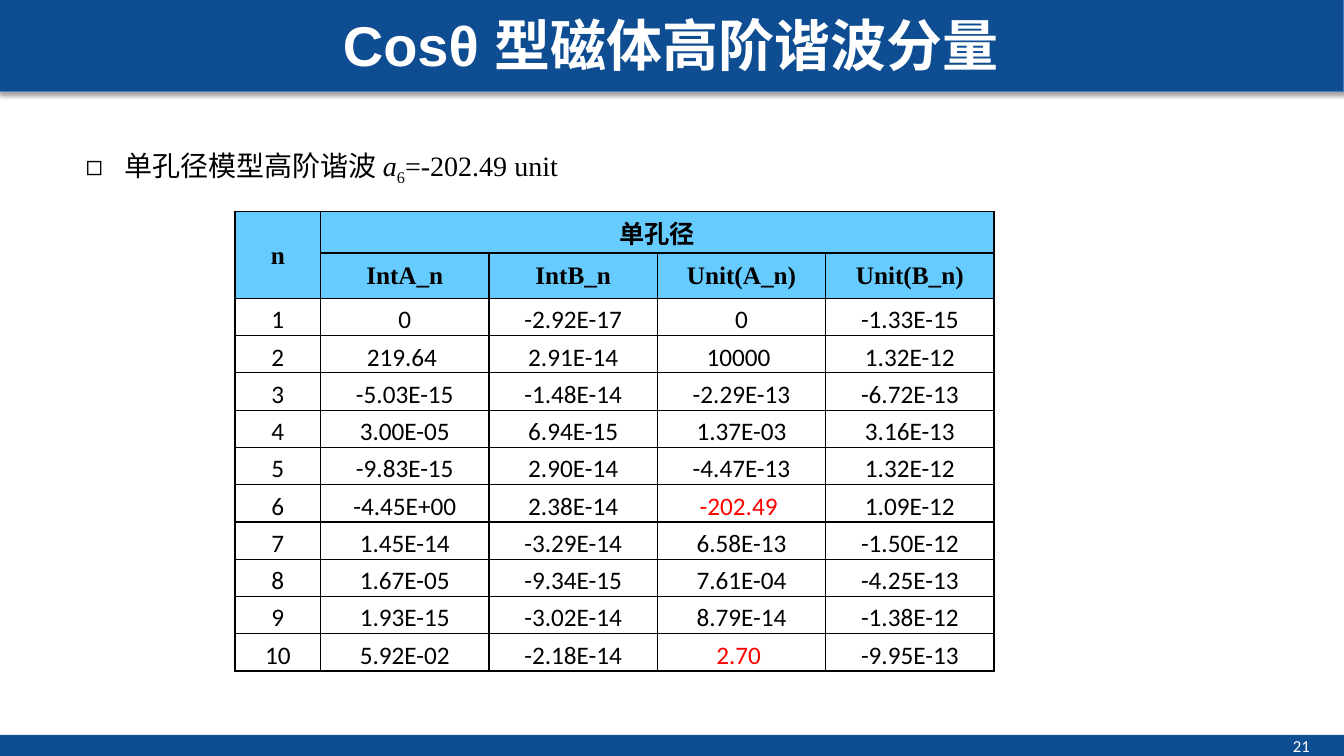
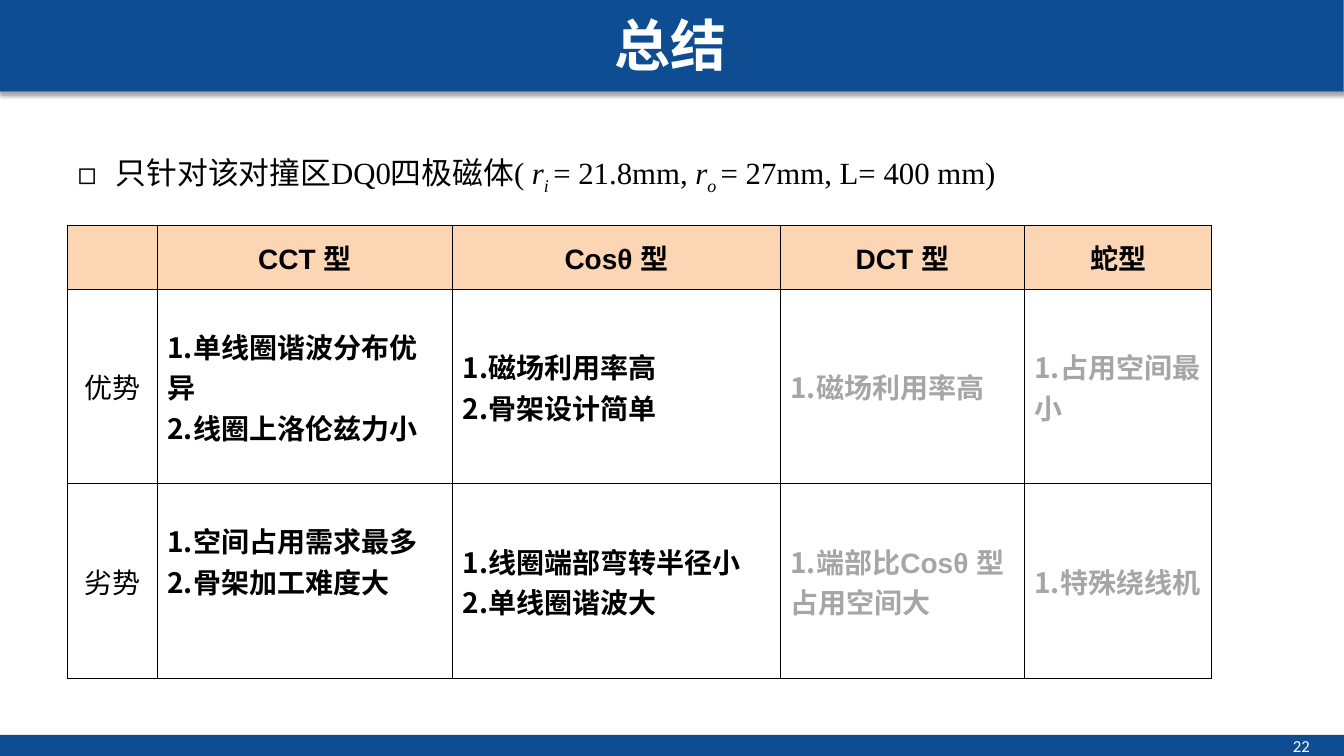
from dataclasses import dataclass, replace
from typing import NamedTuple

import lxml.etree
import pptx
import pptx.dml.color
import pptx.enum.shapes
import pptx.enum.text
import pptx.oxml.ns
import pptx.util

EMU_PER_PX = 9144  # 100 px to the inch
COLORS = {
    "band": "0E4D92",
    "band_edge": "4B7EBC",
    "white": "FFFFFF",
    "black": "000000",
    "red": "FF0000",
    "muted": "A6A6A6",
    "harmonics_head": "66CCFF",
    "summary_head": "FCD5B5",
}
CJK = "Noto Sans CJK SC"
SERIF = "Times New Roman"
ALIGN = pptx.enum.text.PP_ALIGN
ANCHOR = pptx.enum.text.MSO_ANCHOR
qn = pptx.oxml.ns.qn


class Box(NamedTuple):
    left: int
    top: int
    width: int
    height: int


class Insets(NamedTuple):
    left: int = 10
    top: int = 5
    right: int = 10
    bottom: int = 5


@dataclass(frozen=True)
class Style:
    font: str
    size: int
    color: str = "black"
    bold: bool = False
    italic: bool = False
    subscript: bool = False


class Span(NamedTuple):
    text: str
    style: Style


Line = list[Span]


@dataclass(frozen=True)
class Cell:
    lines: list[Line]
    align: ALIGN = ALIGN.CENTER
    anchor: ANCHOR = ANCHOR.MIDDLE
    insets: Insets = Insets()
    fill: str | None = None


TITLE = Style("Arial", 40, "white", bold=True)
PAGE_NUMBER = Style("Calibri", 12, "white")
TITLE_BOX = Box(90, 0, 1150, 88)
TITLE_BAND = Box(0, -1, 1333, 92)
FOOTER_BAND = Box(0, 729, 1333, 24)
PAGE_NUMBER_BOX = Box(1076, 729, 233, 22)
BULLET_INDENT = 38
TIGHT = Insets(1, 1, 1, 0)

HARMONIC_COLUMNS = ["IntA_n", "IntB_n", "Unit(A_n)", "Unit(B_n)"]
HARMONICS = [
    ["0", "-2.92E-17", "0", "-1.33E-15"],
    ["219.64 ", "2.91E-14", "10000 ", "1.32E-12"],
    ["-5.03E-15", "-1.48E-14", "-2.29E-13", "-6.72E-13"],
    ["3.00E-05", "6.94E-15", "1.37E-03", "3.16E-13"],
    ["-9.83E-15", "2.90E-14", "-4.47E-13", "1.32E-12"],
    ["-4.45E+00", "2.38E-14", "-202.49 ", "1.09E-12"],
    ["1.45E-14", "-3.29E-14", "6.58E-13", "-1.50E-12"],
    ["1.67E-05", "-9.34E-15", "7.61E-04", "-4.25E-13"],
    ["1.93E-15", "-3.02E-14", "8.79E-14", "-1.38E-12"],
    ["5.92E-02", "-2.18E-14", "2.70 ", "-9.95E-13"],
]
HIGHLIGHTS = {"-202.49 ", "2.70 "}


def px(length: int) -> pptx.util.Emu:
    return pptx.util.Emu(length * EMU_PER_PX)


def rgb(name: str) -> pptx.dml.color.RGBColor:
    return pptx.dml.color.RGBColor.from_string(COLORS[name])


def place(shape, box: Box) -> None:
    shape.left, shape.top, shape.width, shape.height = map(px, box)


def set_insets(target, insets: Insets) -> None:
    """Apply margins to a text frame or a table cell."""
    target.margin_left, target.margin_top, target.margin_right, target.margin_bottom = map(px, insets)


def format_run(run, style: Style) -> None:
    font = run.font
    font.name, font.size = style.font, pptx.util.Pt(style.size)
    font.bold, font.italic = style.bold, style.italic
    font.color.rgb = rgb(style.color)
    properties = run._r.get_or_add_rPr()
    lxml.etree.SubElement(properties, qn("a:ea"), typeface=CJK)
    if style.subscript:
        properties.set("baseline", "-25000")


def write_lines(frame, lines: list[Line], align: ALIGN) -> None:
    for index, line in enumerate(lines):
        paragraph = frame.add_paragraph() if index else frame.paragraphs[0]
        paragraph.alignment = align
        for span in line:
            run = paragraph.add_run()
            run.text = span.text
            format_run(run, span.style)


def add_band(slide, box: Box):
    band = slide.shapes.add_shape(pptx.enum.shapes.MSO_SHAPE.RECTANGLE, *map(px, box))
    band.shadow.inherit = False
    band.fill.solid()
    band.fill.fore_color.rgb = rgb("band")
    band.line.fill.background()
    return band


def add_shared_bands(slide, layout) -> None:
    """Draw both bands and move them behind the layout's placeholders."""
    footer_band = add_band(slide, FOOTER_BAND)
    title_band = add_band(slide, TITLE_BAND)
    title_band.line.color.rgb = rgb("band_edge")
    title_band.line.width = pptx.util.Pt(0.75)
    effects = title_band.element.spPr.find(qn("a:effectLst"))
    shadow = lxml.etree.SubElement(
        effects, qn("a:outerShdw"), blurRad=str(pptx.util.Pt(3.1)),
        dist=str(pptx.util.Pt(1.8)), dir="5400000", rotWithShape="0")
    shade = lxml.etree.SubElement(shadow, qn("a:srgbClr"), val=COLORS["black"])
    lxml.etree.SubElement(shade, qn("a:alpha"), val="35000")
    for offset, band in enumerate((footer_band, title_band)):
        band.element.nvSpPr.cNvPr.set("id", str(100 + offset))
        layout.shapes.element.insert(2 + offset, band.element)


def add_page(deck, layout, title: str, number: int):
    slide = deck.slides.add_slide(layout)
    frame = slide.shapes.title.text_frame
    frame.auto_size = pptx.enum.text.MSO_AUTO_SIZE.NONE
    frame.vertical_anchor = ANCHOR.MIDDLE
    write_lines(frame, [[Span(title, TITLE)]], ALIGN.CENTER)
    page_number = slide.shapes.add_textbox(*map(px, PAGE_NUMBER_BOX)).text_frame
    page_number.word_wrap = True
    set_insets(page_number, Insets(12, 1, 10, 0))
    write_lines(page_number, [[Span(str(number), PAGE_NUMBER)]], ALIGN.RIGHT)
    return slide


def write_bullet(slide, box: Box, line: Line) -> None:
    body = slide.placeholders[1]
    place(body, box)
    frame = body.text_frame
    frame.auto_size = pptx.enum.text.MSO_AUTO_SIZE.NONE
    write_lines(frame, [line], ALIGN.LEFT)
    paragraph = frame.paragraphs[0]
    paragraph.line_spacing = 1.5
    paragraph.space_before = pptx.util.Pt(0)
    properties = paragraph._p.get_or_add_pPr()
    properties.set("marL", str(px(BULLET_INDENT)))
    properties.set("indent", str(-px(BULLET_INDENT)))
    lxml.etree.SubElement(properties, qn("a:buChar"), char="◻")


def add_borders(cell) -> None:
    properties = cell._tc.get_or_add_tcPr()
    for side in ("lnL", "lnR", "lnT", "lnB"):
        edge = lxml.etree.SubElement(properties, qn(f"a:{side}"), w=str(pptx.util.Pt(1)))
        paint = lxml.etree.SubElement(edge, qn("a:solidFill"))
        lxml.etree.SubElement(paint, qn("a:srgbClr"), val=COLORS["black"])


def add_grid(slide, left: int, top: int, widths: list[int], heights: list[int],
             rows: list[list[Cell]]):
    box = Box(left, top, sum(widths), sum(heights))
    table = slide.shapes.add_table(len(heights), len(widths), *map(px, box)).table
    table.first_row = table.horz_banding = False
    for column, width in zip(table.columns, widths):
        column.width = px(width)
    for row, height, contents in zip(table.rows, heights, rows):
        row.height = px(height)
        for cell, content in zip(row.cells, contents):
            add_borders(cell)
            if content.fill:
                cell.fill.solid()
                cell.fill.fore_color.rgb = rgb(content.fill)
            else:
                cell.fill.background()
            cell.vertical_anchor = content.anchor
            set_insets(cell, content.insets)
            write_lines(cell.text_frame, content.lines, content.align)
    return table


def build_harmonics(slide) -> None:
    serif = Style(SERIF, 20)
    write_bullet(slide, Box(75, 123, 1075, 54), [
        Span("单孔径模型高阶谐波 ", Style(CJK, 20)),
        Span("a", replace(serif, italic=True)),
        Span("6", replace(serif, subscript=True)),
        Span("=-202.49 unit", serif),
    ])
    heading = Style(SERIF, 18, bold=True)
    figure = Style("Calibri", 18)

    def head(text: str) -> Cell:
        lines = [[Span(text, heading)]] if text else []
        return Cell(lines, insets=TIGHT, fill="harmonics_head")

    def value(text: str) -> Cell:
        style = replace(figure, color="red") if text in HIGHLIGHTS else figure
        return Cell([[Span(text, style)]], anchor=ANCHOR.BOTTOM, insets=TIGHT)

    rows = [[head(text) for text in ("n", "单孔径", "", "", "")],
            [head(text) for text in ("", *HARMONIC_COLUMNS)]]
    rows += [[value(text) for text in (str(n), *values)]
             for n, values in enumerate(HARMONICS, start=1)]
    table = add_grid(slide, 233, 210, [85] + [167] * 4,
                     [41, 45] + [37] * len(HARMONICS), rows)
    table.cell(0, 0).merge(table.cell(1, 0))
    table.cell(0, 1).merge(table.cell(0, 4))


def build_summary(slide) -> None:
    serif = Style(SERIF, 22)
    symbol = replace(serif, italic=True)
    index = replace(symbol, subscript=True)
    write_bullet(slide, Box(67, 127, 1083, 59), [
        Span("只针对该对撞区DQ0四极磁体( ", serif),
        Span("r", symbol), Span("i ", index), Span("= 21.8mm, ", serif),
        Span("r", symbol), Span("o ", index), Span("= 27mm, L= 400 mm)", serif),
    ])
    heading = Style("Arial", 20, bold=True)
    label = Style(CJK, 20)
    point = replace(label, bold=True)
    muted = replace(point, color="muted")

    def head(text: str) -> Cell:
        return Cell([[Span(text, heading)]] if text else [], fill="summary_head")

    def points(*texts: str, style: Style = point, insets: Insets = Insets()) -> Cell:
        return Cell([[Span(text, style)] for text in texts], ALIGN.LEFT, insets=insets)

    coil_end = [Span("1.端部比", muted), Span("Cosθ 型", replace(muted, font="Arial")),
                Span("占用空间大", muted)]
    rows = [
        [head(text) for text in ("", "CCT 型", "Cosθ 型", "DCT 型", "蛇型")],
        [Cell([[Span("优势", label)]]),
         points("1.单线圈谐波分布优异", "2.线圈上洛伦兹力小"),
         points("1.磁场利用率高", "2.骨架设计简单"),
         points("1.磁场利用率高", style=muted),
         points("1.占用空间最小", style=muted)],
        [Cell([[Span("劣势", label)]]),
         points("1.空间占用需求最多", "2.骨架加工难度大", insets=Insets(bottom=46)),
         points("1.线圈端部弯转半径小", "2.单线圈谐波大"),
         Cell([coil_end], ALIGN.LEFT),
         points("1.特殊绕线机", style=muted)],
    ]
    add_grid(slide, 67, 224, [89, 293, 325, 242, 186], [63, 193, 193], rows)


def main() -> None:
    deck = pptx.Presentation()
    deck.slide_width, deck.slide_height = px(1333), px(750)
    layout = deck.slide_layouts[1]
    place(layout.placeholders[0], TITLE_BOX)
    harmonics = add_page(deck, layout, "Cosθ 型磁体高阶谐波分量", 21)
    add_shared_bands(harmonics, layout)
    build_harmonics(harmonics)
    build_summary(add_page(deck, layout, "总结", 22))
    deck.save("out.pptx")


if __name__ == "__main__":
    main()
